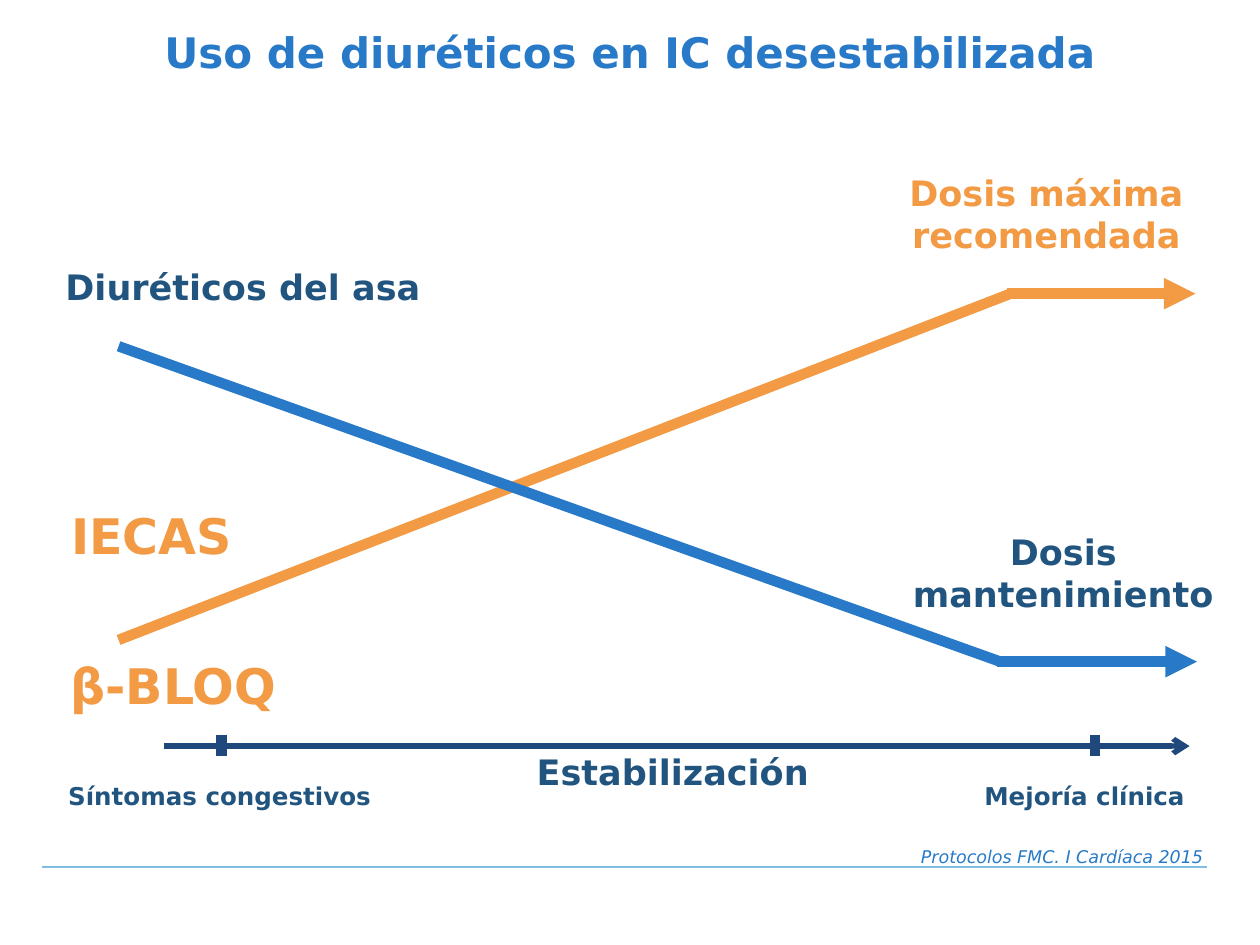
from lxml import etree
from pptx import Presentation
from pptx.dml.color import RGBColor
from pptx.enum import shapes, text
from pptx.oxml import ns
from pptx.util import Cm, Pt

HUES = {
    "blue": "287AC8",
    "ink": "21557F",
    "navy": "1F497D",
    "orange": "F39A44",
    "rule": "7FBDE3",
}
FONT = "DejaVu Sans"
LEFT, MID, RIGHT = text.PP_ALIGN.LEFT, text.PP_ALIGN.CENTER, text.PP_ALIGN.RIGHT


def hue(name):
    return RGBColor.from_string(HUES[name])


def place(shape, *box):
    for key, val in zip(("left", "top", "width", "height"), box):
        setattr(shape, key, Cm(val))


def write(shape, words, size, tint, align=LEFT, wrap=True, grow=True, **style):
    fit = text.MSO_AUTO_SIZE
    frame = shape.text_frame
    form = {
        "word_wrap": wrap,
        "auto_size": fit.SHAPE_TO_FIT_TEXT if grow else fit.NONE,
        "vertical_anchor": text.MSO_ANCHOR.TOP,
    }
    for key, val in form.items():
        setattr(frame, key, val)
    para = frame.paragraphs[0]
    para.alignment = align
    run = para.add_run()
    run.text = words
    for key, val in {"name": FONT, "size": Pt(size), "bold": True, **style}.items():
        setattr(run.font, key, val)
    run.font.color.rgb = hue(tint)


def label(home, box, words, size, tint, **form):
    shape = home.shapes.add_textbox(*map(Cm, box))
    write(shape, words, size, tint, **form)


def stroke(home, start, end, tint, width, tip=None):
    line = home.shapes.add_connector(
        shapes.MSO_CONNECTOR.STRAIGHT, *map(Cm, start + end))
    line.line.color.rgb = hue(tint)
    line.line.width = Pt(width)
    if tip:
        etree.SubElement(line.line._get_or_add_ln(), ns.qn("a:tailEnd"), type=tip)
    etree.SubElement(line._element.spPr, ns.qn("a:effectLst"))


def trend(home, start, bend, stop, tint):
    """Slope from start to bend, then a level arrow with a slight overlap."""
    x, y = bend
    stroke(home, start, bend, tint, 6)
    stroke(home, (x - 0.08, y), (stop, y), tint, 6, "triangle")


def main():
    deck = Presentation()
    deck.slide_width, deck.slide_height = Cm(25.4), Cm(19.05)
    slide = deck.slides.add_slide(deck.slide_layouts[5])

    # Footer rule
    stroke(slide, (0.84, 17.48), (24.33, 17.48), "rule", 0.75)

    # Time axis with its two ticks
    axis = slide.shapes.add_group_shape()
    stroke(axis, (3.3, 15.04), (23.98, 15.04), "navy", 3, "arrow")
    label(axis, (10.57, 15.01, 6.76, 1.11), "Estabilización", 20, "ink", wrap=False)
    ticks = [
        (4.47, (0.71, 15.62, 7.44, 0.86), "Síntomas congestivos"),
        (22.07, (19.3, 15.62, 5.13, 0.86), "Mejoría clínica"),
    ]
    for x, box, words in ticks:
        stroke(axis, (x, 14.81), (x, 15.24), "navy", 6)
        label(axis, box, words, 14, "ink", align=MID, wrap=False)

    # Rising dose
    rise = slide.shapes.add_group_shape()
    trend(rise, (2.39, 12.9), (20.37, 5.92), 24.1, "orange")
    label(rise, (1.19, 10.06, 3.94, 1.45), "IECAS", 28, "orange", wrap=False)
    label(rise, (16.28, 3.33, 9.63, 1.96), "Dosis máxima recomendada",
          20, "orange", align=MID)

    # Falling dose
    fall = slide.shapes.add_group_shape()
    trend(fall, (2.39, 6.98), (20.17, 13.34), 24.13, "blue")
    label(fall, (1.07, 5.23, 7.67, 1.11), "Diuréticos del asa", 20, "ink", wrap=False)
    label(fall, (16.99, 10.57, 8.89, 1.96), "Dosis mantenimiento",
          20, "ink", align=MID)

    # Lower label and source
    label(slide, (1.17, 13.08, 5.79, 1.45), "β-BLOQ", 28, "orange")
    label(slide, (1.7, 16.92, 22.8, 1.11), "Protocolos FMC. I Cardíaca 2015",
          10, "blue", align=RIGHT, bold=False, italic=True)

    # Title
    title = slide.shapes.title
    place(title, 0, 0.41, 25.4, 1.65)
    write(title, "Uso de diuréticos en IC desestabilizada", 24, "blue",
          align=MID, grow=False)

    deck.save("out.pptx")


if __name__ == "__main__":
    main()
